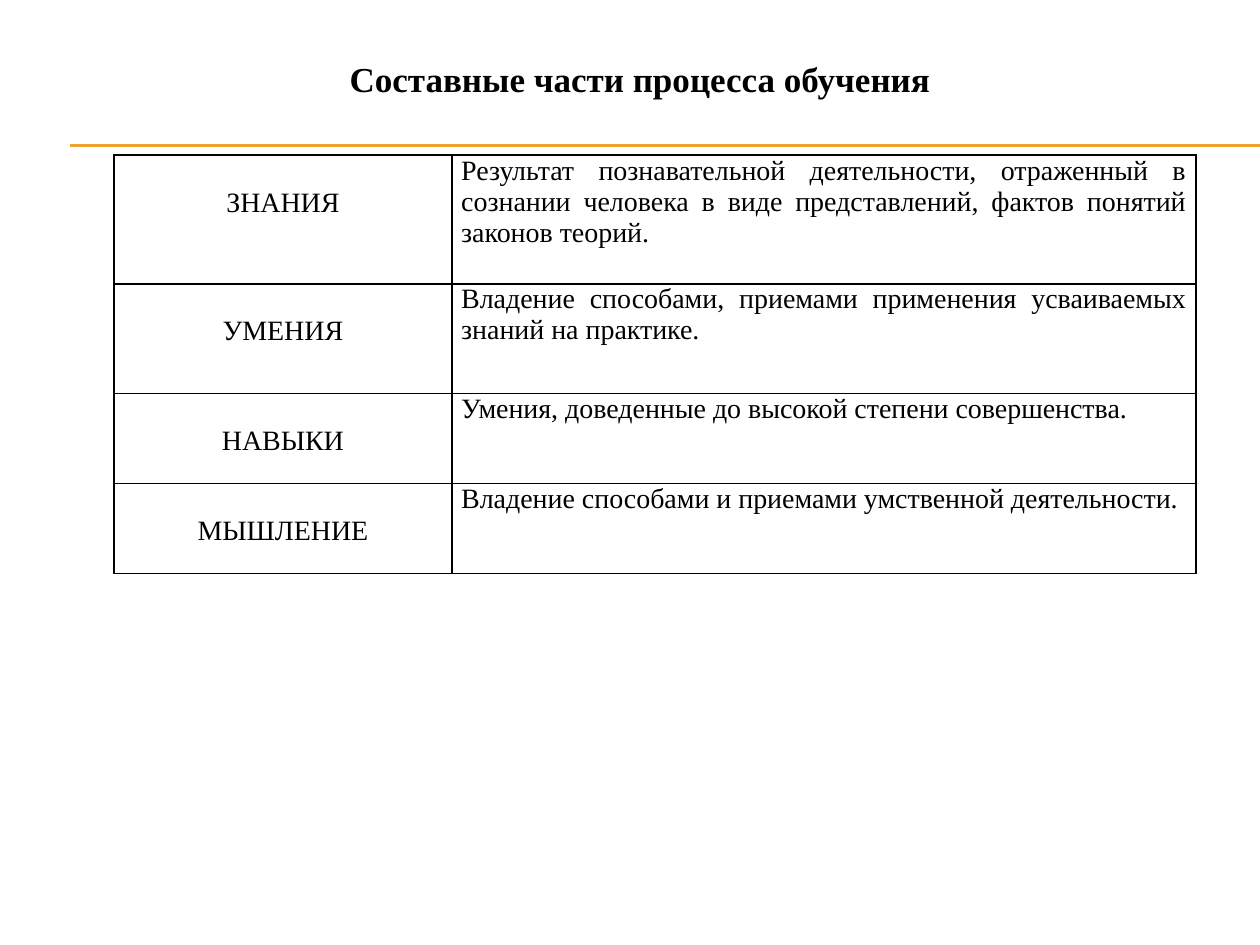
from lxml import etree
from pptx import Presentation
from pptx import util as u
from pptx.dml.color import RGBColor
from pptx.enum import shapes, text
from pptx.oxml.ns import qn

Pt = u.Pt
FONT = "Times New Roman"
BLACK = "000000"
GOLD = "F0A22E"
LINE = 18.3  # height of one 16 pt line
COLS = [193, 425.2]
ROWS = [
    (73.6, "ЗНАНИЯ",
     "Результат познавательной деятельности, отраженный в сознании "
     "человека в виде представлений, фактов понятий законов теорий."),
    (62.6, "УМЕНИЯ",
     "Владение способами, приемами применения усваиваемых знаний "
     "на практике."),
    (51.6, "НАВЫКИ", "Умения, доведенные до высокой степени совершенства."),
    (51.2, "МЫШЛЕНИЕ",
     "Владение способами и приемами умственной деятельности."),
]


def color(code):
    return RGBColor.from_string(code)


def write(frame, words, size, align, bold=False):
    par = frame.paragraphs[0]
    par.alignment = align
    run = par.add_run()
    run.text = words
    font = run.font
    font.name = FONT
    font.size = Pt(size)
    font.bold = bold
    font.color.rgb = color(BLACK)


def add_title(slide):
    title = slide.shapes.title
    title.left, title.top = Pt(87.8), Pt(28.8)
    title.width, title.height = Pt(555.8), Pt(53.3)
    frame = title.text_frame
    frame.word_wrap = True
    frame.auto_size = text.MSO_AUTO_SIZE.NONE
    frame.vertical_anchor = text.MSO_ANCHOR.MIDDLE
    frame.margin_top, frame.margin_bottom = Pt(3.6), Pt(24.3)
    write(frame, "Составные части процесса обучения", 20,
          text.PP_ALIGN.CENTER, True)


def add_rule(slide, y):
    rule = slide.shapes.add_connector(
        shapes.MSO_CONNECTOR.STRAIGHT, Pt(40.3), Pt(y), Pt(720), Pt(y))
    rule.line.color.rgb = color(GOLD)
    rule.line.width = Pt(0.75)
    etree.SubElement(rule._element.spPr, qn("a:effectLst"))


def add_borders(cell):
    """Draw a 1 pt black line on all four sides; call before the fill."""
    props = cell._tc.get_or_add_tcPr()
    for side in ("lnL", "lnR", "lnT", "lnB"):
        line = etree.SubElement(props, qn("a:" + side), w=str(Pt(1)))
        fill = etree.SubElement(line, qn("a:solidFill"))
        etree.SubElement(fill, qn("a:srgbClr"), val=BLACK)


def fill_cell(cell, words, align, top=0):
    add_borders(cell)
    cell.fill.background()
    cell.margin_left = cell.margin_right = Pt(5.4)
    cell.margin_top, cell.margin_bottom = Pt(top), Pt(0)
    write(cell.text_frame, words, 16, align)


def add_terms(slide):
    high = sum(row[0] for row in ROWS)
    frame = slide.shapes.add_table(
        len(ROWS), len(COLS), Pt(65.2), Pt(88.6), Pt(sum(COLS)), Pt(high))
    table = frame.table
    table.first_row = table.horz_banding = False
    for col, width in zip(table.columns, COLS):
        col.width = Pt(width)
    for i, (height, term, sense) in enumerate(ROWS):
        table.rows[i].height = Pt(height)
        fill_cell(table.cell(i, 0), term, text.PP_ALIGN.CENTER, LINE)
        fill_cell(table.cell(i, 1), sense, text.PP_ALIGN.JUSTIFY)


def main():
    deck = Presentation()
    deck.slide_width, deck.slide_height = Pt(720), Pt(540)
    slide = deck.slides.add_slide(deck.slide_layouts[5])
    for y in (82.8, 83.5):
        add_rule(slide, y)
    add_terms(slide)
    add_title(slide)
    deck.save("out.pptx")


if __name__ == "__main__":
    main()
